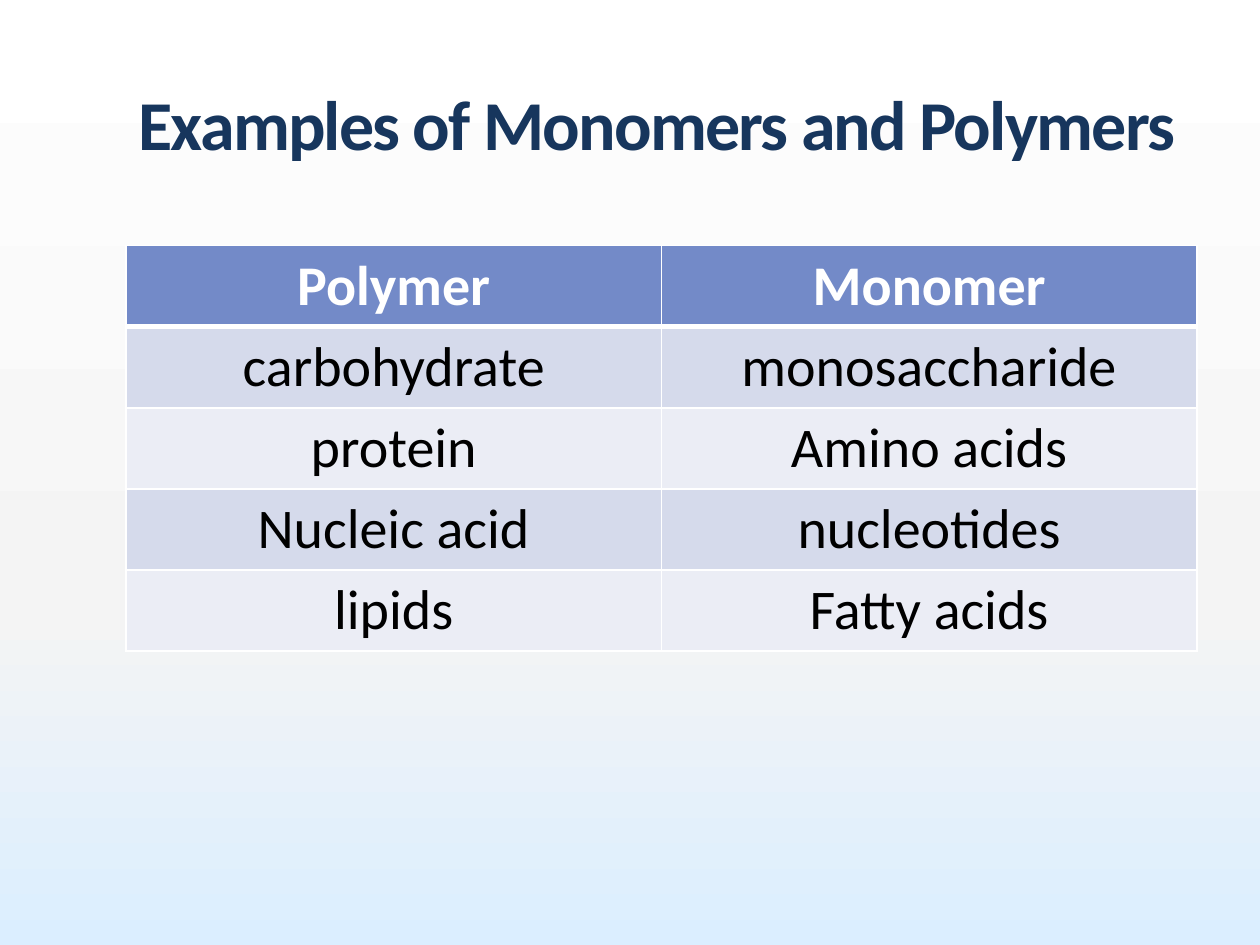
from copy import deepcopy

from pptx import Presentation
from pptx.dml.color import RGBColor
from pptx.enum.text import MSO_ANCHOR as Anchor, PP_ALIGN as Align
from pptx.oxml import parse_xml
from pptx.oxml.ns import nsdecls, qn
from pptx.util import Inches, Pt

NAVY = RGBColor(0x17, 0x36, 0x5D)
WHITE = RGBColor(0xFF, 0xFF, 0xFF)
BLACK = RGBColor(0x00, 0x00, 0x00)
HEADER_BLUE = RGBColor(0x73, 0x8A, 0xC8)
BAND_DARK = RGBColor(0xD5, 0xDA, 0xEB)
BAND_LIGHT = RGBColor(0xEB, 0xED, 0xF5)
BACKGROUND_STOPS = [
    (0, WHITE),
    (0.65, RGBColor(0xF4, 0xF4, 0xF4)),
    (1, RGBColor(0xDB, 0xEE, 0xFF)),
]

ROWS = [
    ("Polymer", "Monomer"),
    ("carbohydrate", "monosaccharide"),
    ("protein", "Amino acids"),
    ("Nucleic acid", "nucleotides"),
    ("lipids", "Fatty acids"),
]


def write_text(frame, text, size, color, bold=False, align=Align.LEFT, spacing=None):
    paragraph = frame.paragraphs[0]
    paragraph.alignment = align
    run = paragraph.add_run()
    run.text = text
    run.font.name = "Calibri"
    run.font.size = Pt(size)
    run.font.bold = bold
    run.font.color.rgb = color
    if spacing is not None:
        run.font._element.set("spc", str(int(spacing * 100)))


def set_background(slide):
    fill = slide.background.fill
    fill.gradient()
    fill.gradient_angle = 270
    stop_list = next(slide.element.iter(qn("a:gsLst")))
    stop_list.append(deepcopy(stop_list[0]))
    for stop, (position, color) in zip(fill.gradient_stops, BACKGROUND_STOPS):
        stop.position = position
        stop.color.rgb = color


def add_title(slide, text):
    title = slide.shapes.title
    title.left, title.top = Inches(1), Inches(0.56)
    title.width, title.height = Inches(8.5), Inches(1)
    frame = title.text_frame
    frame.word_wrap = True
    frame.vertical_anchor = Anchor.TOP
    frame.margin_top = Inches(0.08)
    write_text(frame, text, size=40, color=NAVY, bold=True, spacing=-1)


def set_borders(cell, top, bottom):
    properties = cell._tc.get_or_add_tcPr()
    widths = {"lnL": 1, "lnR": 1, "lnT": top, "lnB": bottom}
    for index, (side, width) in enumerate(widths.items()):
        line = parse_xml(
            f'<a:{side} {nsdecls("a")} w="{Pt(width)}"><a:solidFill>'
            f'<a:srgbClr val="{WHITE}"/></a:solidFill></a:{side}>'
        )
        properties.insert(index, line)


def add_table(slide, rows):
    shape = slide.shapes.add_table(
        len(rows), len(rows[0]), Inches(1), Inches(1.95), Inches(8.5), Inches(3.17)
    )
    for row_index, row in enumerate(rows):
        is_header = row_index == 0
        band = BAND_DARK if row_index % 2 else BAND_LIGHT
        for column_index, text in enumerate(row):
            cell = shape.table.cell(row_index, column_index)
            cell.fill.solid()
            cell.fill.fore_color.rgb = HEADER_BLUE if is_header else band
            write_text(
                cell.text_frame,
                text,
                size=32,
                color=WHITE if is_header else BLACK,
                bold=is_header,
                align=Align.CENTER,
            )
            set_borders(
                cell,
                top=3 if row_index == 1 else 1,
                bottom=3 if is_header else 1,
            )


def main():
    presentation = Presentation()
    presentation.slide_width = Inches(10)
    presentation.slide_height = Inches(7.5)
    slide = presentation.slides.add_slide(presentation.slide_layouts[5])
    set_background(slide)
    add_title(slide, "Examples of Monomers and Polymers")
    add_table(slide, ROWS)
    presentation.save("out.pptx")


if __name__ == "__main__":
    main()
